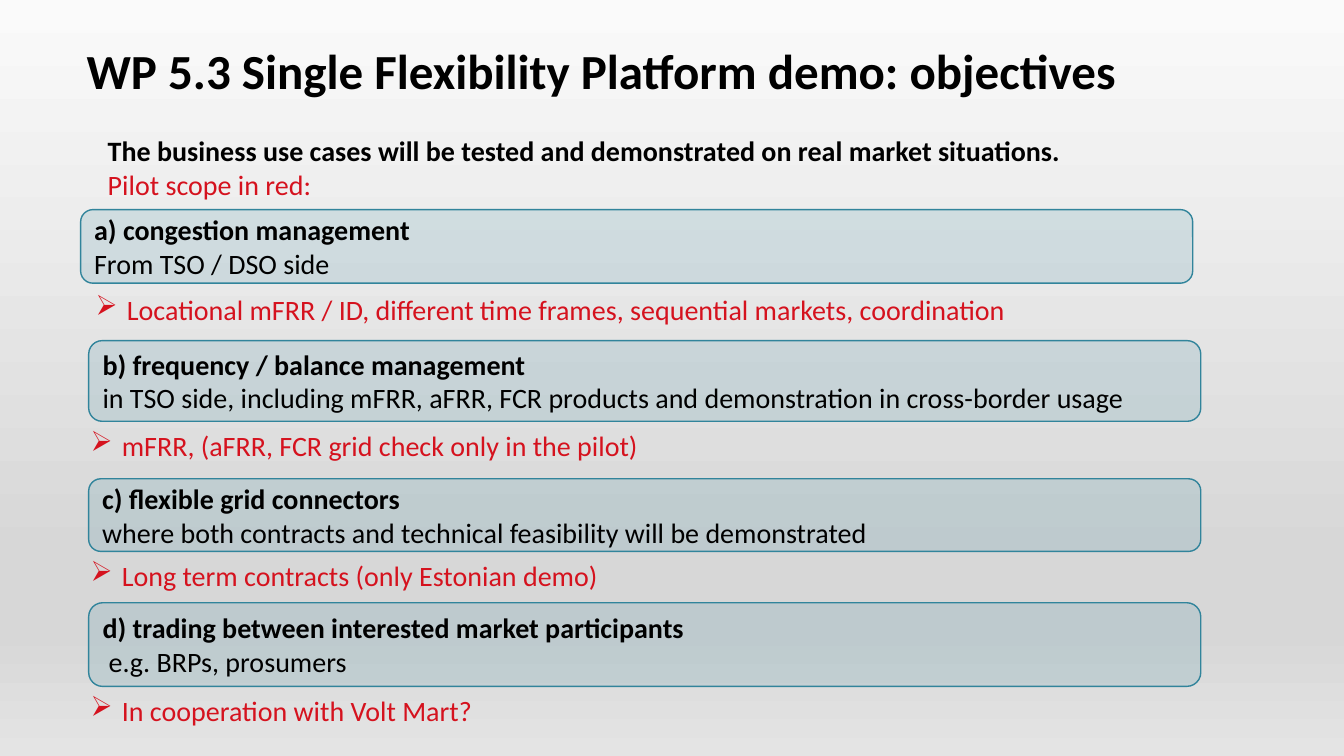
"""Build the slide on the objectives of the Single Flexibility Platform demo."""
from copy import deepcopy

from pptx import Presentation
from pptx.dml.color import RGBColor
from pptx.enum import shapes, text
from pptx.oxml import ns, xmlchemy
from pptx.util import Inches, Pt

BLACK = RGBColor(0x00, 0x00, 0x00)
RED = RGBColor(0xD5, 0x12, 0x1E)
TEAL = RGBColor(0x31, 0x84, 0x9B)
BACKDROP = [(0, RGBColor(0xFA, 0xFA, 0xFA)), (0.74, RGBColor(0xD7, 0xD7, 0xD7)),
            (0.83, RGBColor(0xD7, 0xD7, 0xD7)), (1, RGBColor(0xE4, 0xE4, 0xE4))]


def write(p, words, size=20, color=BLACK, bold=False, bullet=None, indent=0):
    """Fill a paragraph with one formatted run."""
    pPr = p._p.get_or_add_pPr()
    p.alignment = text.PP_ALIGN.LEFT
    if indent:
        pPr.set("marL", str(Inches(indent)))
    if bullet:
        pPr.set("indent", str(-Inches(indent)))
        xmlchemy.OxmlElement("a:buChar")
        bu = xmlchemy.OxmlElement("a:buChar")
        bu.set("char", bullet)
        pPr.append(bu)
    r = p.add_run()
    r.text = words
    r.font.name = "Calibri"
    r.font.size = Pt(size)
    r.font.bold = bold
    r.font.color.rgb = color


def text_box(left, top, width, height):
    """Add a wrapping text box and return its text frame."""
    tf = s.shapes.add_textbox(Inches(left), Inches(top), Inches(width), Inches(height)).text_frame
    tf.word_wrap = True
    return tf


prs = Presentation()
prs.slide_width, prs.slide_height = Inches(13.33), Inches(7.5)
s = prs.slides.add_slide(prs.slide_layouts[6])

fill = s.background.fill
fill.gradient()
fill.gradient_angle = 270
stops = s.element.find(".//" + ns.qn("a:gsLst"))
for _ in BACKDROP[2:]:
    stops.append(deepcopy(stops[0]))
for stop, (position, color) in zip(fill.gradient_stops, BACKDROP):
    stop.position = position
    stop.color.rgb = color

tf = text_box(0.76, 0.13, 11.28, 1.21)
tf.vertical_anchor = text.MSO_ANCHOR.MIDDLE
tf.paragraphs[0].line_spacing = 0.9
write(tf.paragraphs[0], "WP 5.3 Single Flexibility Platform demo: objectives", size=35, bold=True)

tf = text_box(0.97, 1.28, 12.28, 0.77)
write(tf.paragraphs[0], "The business use cases will be tested and demonstrated on real market situations.",
      bold=True)
write(tf.add_paragraph(), "Pilot scope in red:", color=RED)

use_cases = [
    (0.8, 2.08, 0.73, "a) congestion management", "From TSO / DSO side", 0,
     0.85, 2.85, "Locational mFRR / ID, different time frames, sequential markets, coordination"),
    (0.88, 3.38, 0.8, "b) frequency / balance management",
     "in TSO side, including mFRR, aFRR, FCR products and demonstration in cross-border usage", 0,
     0.8, 4.2, "mFRR, (aFRR, FCR grid check only in the pilot)"),
    (0.88, 4.75, 0.72, "c) flexible grid connectors",
     "where both contracts and technical feasibility will be demonstrated", 0,
     0.8, 5.49, "Long term contracts (only Estonian demo)"),
    (0.88, 5.98, 0.83, "d) trading between interested market participants", "e.g. BRPs, prosumers", 0.06,
     0.8, 6.83, "In cooperation with Volt Mart?"),
]
for left, top, height, heading, detail, indent, scope_left, scope_top, scope in use_cases:
    sp = s.shapes.add_shape(shapes.MSO_SHAPE.ROUNDED_RECTANGLE,
                            Inches(left), Inches(top), Inches(11.03), Inches(height))
    sp.shadow.inherit = False
    sp.fill.solid()
    sp.fill.fore_color.rgb = TEAL
    alpha = xmlchemy.OxmlElement("a:alpha")
    alpha.set("val", "15000")
    sp.element.spPr.find(ns.qn("a:solidFill"))[0].append(alpha)
    sp.line.color.rgb = TEAL
    sp.line.width = Pt(1)
    tf = sp.text_frame
    tf.word_wrap = True
    tf.vertical_anchor = text.MSO_ANCHOR.MIDDLE
    tf.margin_top = tf.margin_bottom = 0
    write(tf.paragraphs[0], heading, bold=True)
    write(tf.add_paragraph(), detail, indent=indent)

    tf = text_box(scope_left, scope_top, 11.41, 0.44)
    write(tf.paragraphs[0], scope, color=RED, bullet="➢", indent=0.31)

prs.save("out.pptx")
